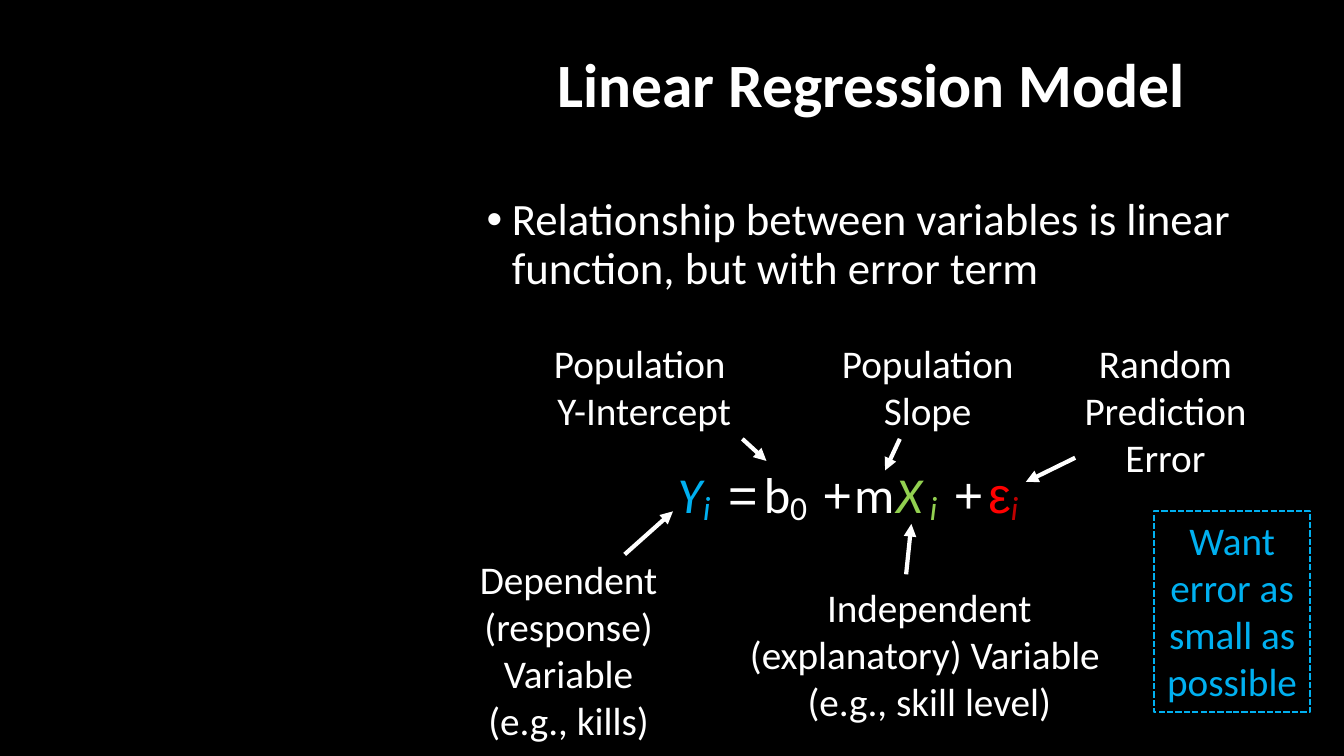
import pptx
import pptx.util
import pptx.dml.color
import pptx.enum.dml
import pptx.enum.shapes
import pptx.enum.text
import pptx.oxml.ns
import lxml.etree

PX = 9525
INK = {"black": "000000", "white": "FFFFFF", "blue": "00B0F0",
       "green": "92D050", "red": "FF0000", "dark": "C00000"}
ALIGN = pptx.enum.text.PP_ALIGN
qn = pptx.oxml.ns.qn


def tint(name):
    return pptx.dml.color.RGBColor.from_string(INK[name])


def write(par, text, size, color="white", face="Calibri", bold=False, slant=False):
    for row, line in enumerate(text.split("\n")):
        if row:
            par.add_line_break()
        run = par.add_run()
        run.text = line
        font = run.font
        font.name = face
        font.size = pptx.util.Pt(size)
        font.bold = bold
        font.italic = slant
        font.color.rgb = tint(color)


deck = pptx.Presentation()
deck.slide_width = 1280 * PX
deck.slide_height = 720 * PX
slide = deck.slides.add_slide(deck.slide_layouts[5])
slide.background.fill.solid()
slide.background.fill.fore_color.rgb = tint("black")

title = slide.shapes.title
title.left, title.top, title.width, title.height = [n * PX for n in (88, 14, 1051, 139)]
title.text_frame.vertical_anchor = pptx.enum.text.MSO_ANCHOR.MIDDLE
par = title.text_frame.paragraphs[0]
par.alignment = ALIGN.RIGHT
par.line_spacing = 0.9
write(par, "Linear Regression Model", 44, bold=True)

body = slide.shapes.add_textbox(*[n * PX for n in (454, 183, 812, 443)])
body.text_frame.word_wrap = True
par = body.text_frame.paragraphs[0]
props = par._p.get_or_add_pPr()
props.set("marL", str(24 * PX))
props.set("indent", str(-24 * PX))
lxml.etree.SubElement(props, qn("a:buFont")).set("typeface", "Arial")
lxml.etree.SubElement(props, qn("a:buChar")).set("char", "•")
par.line_spacing = 0.9
write(par, "Relationship between variables is linear function, but with error term", 32)

group = slide.shapes.add_group_shape()
terms = [
    ("Y", 636, 43, 36, "blue", "Calibri", True),
    ("i", 660, 27, 24, "blue", "Calibri", True),
    ("=", 684, 46, 36, "white", "Arial", False),
    ("b", 718, 44, 36, "white", "Calibri", False),
    ("0", 743, 36, 24, "white", "Calibri", False),
    ("+", 774, 46, 36, "white", "Arial", False),
    ("m", 804, 69, 36, "white", "Calibri", False),
    ("X", 844, 44, 36, "green", "Calibri", True),
    ("i", 876, 27, 24, "green", "Calibri", True),
    ("+", 899, 46, 36, "white", "Arial", False),
    ("ε", 932, 40, 36, "red", "Arial", False),
    ("i", 953, 27, 24, "dark", "Calibri", True),
]
for text, left, width, size, color, face, slant in terms:
    top, height = (436, 67) if size == 36 else (459, 48)
    box = group.shapes.add_textbox(left * PX, top * PX, width * PX, height * PX)
    box.text_frame.word_wrap = False
    write(box.text_frame.paragraphs[0], text, size, color, face, slant=slant)

labels = [
    ("Dependent (response) Variable\n(e.g., kills)", 426, 524, 231, 190),
    ("Independent (explanatory) Variable \n(e.g., skill level)", 689, 551, 392, 145),
    ("Population Slope", 789, 318, 189, 100),
    ("Population \nY-Intercept", 498, 318, 231, 100),
    ("Random Prediction Error", 1011, 318, 198, 145),
]
for text, *place in labels:
    box = slide.shapes.add_textbox(*[n * PX for n in place])
    box.text_frame.word_wrap = True
    par = box.text_frame.paragraphs[0]
    par.alignment = ALIGN.CENTER
    write(par, text, 28)

arrows = [(595, 528, 641, 487), (863, 547, 868, 499), (707, 418, 730, 439),
          (857, 418, 843, 448), (1024, 436, 977, 459)]
for ends in arrows:
    arrow = slide.shapes.add_connector(
        pptx.enum.shapes.MSO_CONNECTOR.STRAIGHT, *[n * PX for n in ends])
    arrow.line.color.rgb = tint("white")
    arrow.line.width = pptx.util.Pt(3)
    lxml.etree.SubElement(arrow.line._get_or_add_ln(), qn("a:tailEnd")).set("type", "triangle")
    lxml.etree.SubElement(arrow._element.spPr, qn("a:effectLst"))

goal = slide.shapes.add_shape(
    pptx.enum.shapes.MSO_SHAPE.RECTANGLE, *[n * PX for n in (1099, 487, 149, 191)])
goal.shadow.inherit = False
goal.fill.background()
goal.line.color.rgb = tint("blue")
goal.line.width = pptx.util.Pt(1.5)
goal.line.dash_style = pptx.enum.dml.MSO_LINE.SQUARE_DOT
goal.text_frame.word_wrap = True
goal.text_frame.vertical_anchor = pptx.enum.text.MSO_ANCHOR.TOP
par = goal.text_frame.paragraphs[0]
par.alignment = ALIGN.CENTER
write(par, "Want error as small as possible", 28, "blue")

deck.save("out.pptx")
